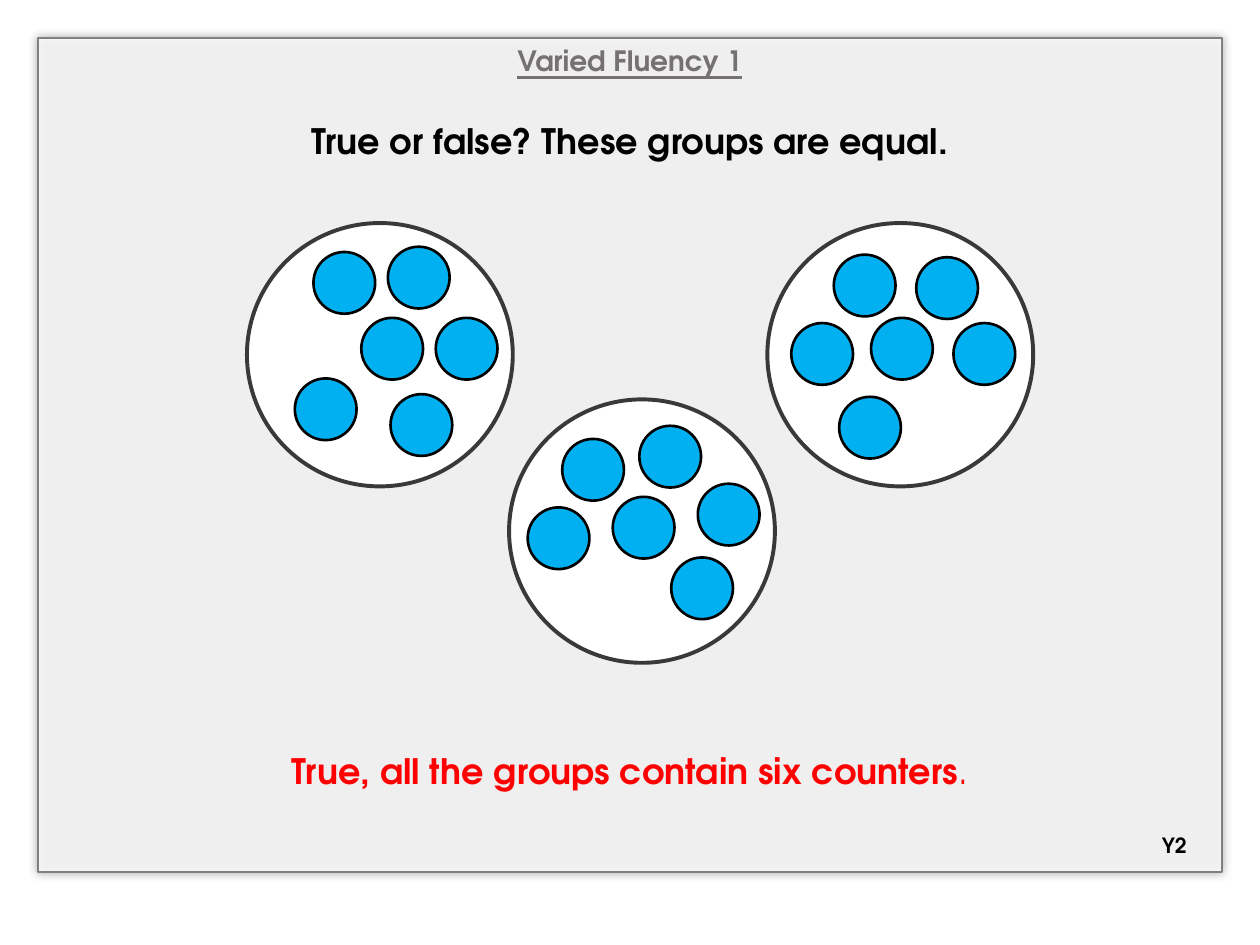
import pptx
import pptx.dml.color
import pptx.enum.shapes
import pptx.enum.text
import pptx.oxml
import pptx.oxml.ns
import pptx.util

CELL = 0.5  # inches; the page is a grid of 20 columns by 15 rows
COLUMNS, ROWS = 20, 15
FONT = "TeX Gyre Adventor"
LINE_PITCH = 24  # points per 20 pt line

PANEL_BOX = (0.6, 0.6, 18.8, 13.24)
YEAR_BOX = (18.02, 13.12, 1.24, 0.6)
HOOP_SIZE = (4.22, 4.18)
COUNTER = 0.98

# Hoop corner in grid cells, then counter corners as shares of the hoop
GROUPS = [
    ((3.92, 3.54), [(0.43, 0.36), (0.53, 0.09), (0.18, 0.59),
                    (0.25, 0.11), (0.71, 0.36), (0.54, 0.65)]),
    ((12.18, 3.54), [(0.09, 0.38), (0.39, 0.36), (0.27, 0.66),
                     (0.70, 0.38), (0.25, 0.12), (0.56, 0.13)]),
    ((8.08, 6.34), [(0.07, 0.41), (0.39, 0.37), (0.49, 0.10),
                    (0.61, 0.60), (0.71, 0.32), (0.20, 0.15)]),
]


def color(value):
    return pptx.dml.color.RGBColor.from_string(value)


def cells(*lengths):
    return [pptx.util.Inches(length * CELL) for length in lengths]


def add_shape(page, kind, box, fill, line, weight):
    shape = page.shapes.add_shape(kind, *cells(*box))
    shape.shadow.inherit = False
    shape.fill.solid()
    shape.fill.fore_color.rgb = color(fill)
    shape.line.color.rgb = color(line)
    shape.line.width = pptx.util.Pt(weight)
    return shape


def add_span(para, text, size, shade, **changes):
    span = para.add_run()
    span.text = text
    span.font.color.rgb = color(shade)
    formats = {"name": FONT, "size": pptx.util.Pt(size), "bold": True} | changes
    for name, value in formats.items():
        setattr(span.font, name, value)


def soften_panel(panel):
    """Make the fill slightly transparent and put a soft shadow behind it."""
    namespace = pptx.oxml.ns.nsdecls("a")
    fill = panel.fill.fore_color._xFill.find(".//" + pptx.oxml.ns.qn("a:srgbClr"))
    fill.append(pptx.oxml.parse_xml(f'<a:alpha {namespace} val="82000"/>'))
    effects = panel._element.spPr.find(pptx.oxml.ns.qn("a:effectLst"))
    effects.append(pptx.oxml.parse_xml(
        f'<a:outerShdw {namespace} blurRad="{pptx.util.Pt(5)}" dist="0" dir="0" '
        'algn="ctr" rotWithShape="0"><a:srgbClr val="000000">'
        '<a:alpha val="40000"/></a:srgbClr></a:outerShdw>'))


def draw_panel(page, box):
    panel = add_shape(page, pptx.enum.shapes.MSO_SHAPE.RECTANGLE, box,
                      "FFFFFF", "808080", 1)
    soften_panel(panel)
    frame = panel.text_frame
    frame.word_wrap = True
    frame.vertical_anchor = pptx.enum.text.MSO_ANCHOR.TOP

    # Heading, question and answer, with the lines left free above each
    heading, question, answer = (
        frame.paragraphs[0], frame.add_paragraph(), frame.add_paragraph())
    for para, free_lines in ((heading, 0), (question, 1), (answer, 14)):
        para.alignment = pptx.enum.text.PP_ALIGN.CENTER
        para.space_before = pptx.util.Pt(free_lines * LINE_PITCH)
    add_span(heading, "Varied Fluency 1", 16, "767171", underline=True)
    add_span(question, "True or false? These groups are equal.", 20, "000000")
    add_span(answer, "True, all the groups contain six counters", 20, "FF0000")
    add_span(answer, ".", 20, "FF0000", bold=False)


def draw_group(page, box, counters):
    oval = pptx.enum.shapes.MSO_SHAPE.OVAL
    left, top, width, height = box
    add_shape(page, oval, box, "FFFFFF", "3B3838", 2.25)
    for across, down in counters:
        spot = (left + across * width, top + down * height, COUNTER, COUNTER)
        add_shape(page, oval, spot, "00B0F0", "000000", 1.5)


def draw_year_label(page, box):
    frame = page.shapes.add_textbox(*cells(*box)).text_frame
    frame.word_wrap = True
    frame.vertical_anchor = pptx.enum.text.MSO_ANCHOR.MIDDLE
    para = frame.paragraphs[0]
    para.alignment = pptx.enum.text.PP_ALIGN.CENTER
    add_span(para, "Y2", 12, "000000")


def main():
    deck = pptx.Presentation()
    deck.slide_width, deck.slide_height = cells(COLUMNS, ROWS)
    page = deck.slides.add_slide(deck.slide_layouts[6])
    draw_panel(page, PANEL_BOX)
    for corner, counters in GROUPS:
        draw_group(page, corner + HOOP_SIZE, counters)
    draw_year_label(page, YEAR_BOX)
    deck.save("out.pptx")


if __name__ == "__main__":
    main()
